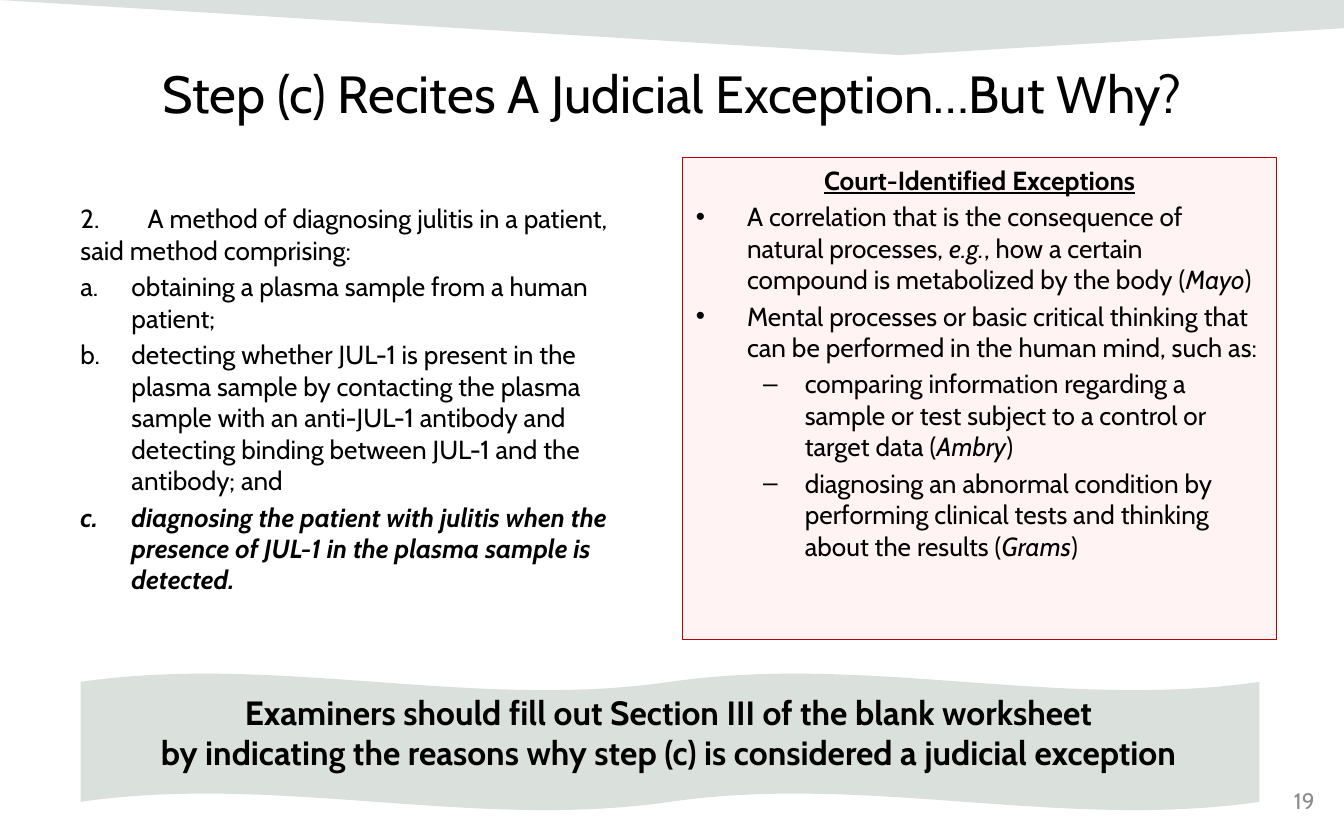
import pptx
import pptx.dml.color
import pptx.enum.shapes
import pptx.enum.text
import pptx.oxml.ns
import pptx.util
from lxml import etree

Inches = pptx.util.Inches
Pt = pptx.util.Pt
ALIGN = pptx.enum.text.PP_ALIGN
ANCHOR = pptx.enum.text.MSO_ANCHOR
SHAPE = pptx.enum.shapes.MSO_SHAPE

FONT = "Cabin"
BULLET_FONT = "Arial"
BODY_SIZE = 14
SPACE_SHARE = 0.2

TITLE = "Step (c) Recites A Judicial Exception…But Why?"
BANNER = ("Examiners should fill out Section III of the blank worksheet\v"
          "by indicating the reasons why step (c) is considered a judicial exception")
PAGE_NUMBER = "19"

# Corners of the band along the top edge, in hundredths of an inch
TOP_BAND = [(0, 0), (1000, 0), (1000, 21), (669, 41)]

# Each paragraph: style name, then runs of (text, marks); marks: b bold, i italic, u underline
CLAIM = [
    ("intro", [("2.\tA method of diagnosing julitis in a patient, said method comprising:", "")]),
    ("letter", [("obtaining a plasma sample from a human patient;", "")]),
    ("letter", [("detecting whether JUL-1 is present in the plasma sample by contacting the plasma "
                 "sample with an anti-JUL-1 antibody and detecting binding between JUL-1 and the "
                 "antibody; and", "")]),
    ("letter", [("diagnosing the patient with julitis when the presence of JUL-1 in the plasma "
                 "sample is detected.", "bi")]),
]
EXCEPTIONS = [
    ("heading", [("Court-Identified Exceptions", "bu")]),
    ("bullet", [("A correlation that is the consequence of natural processes, ", ""), ("e.g.", "i"),
                (", how a certain compound is metabolized by the body (", ""), ("Mayo", "i"),
                (")", "")]),
    ("bullet", [("Mental processes or basic critical thinking that can be performed in the human "
                 "mind, such as:", "")]),
    ("dash", [("comparing information regarding a sample or test subject to a control or target "
               "data (", ""), ("Ambry", "i"), (")", "")]),
    ("dash", [("diagnosing an abnormal condition by performing clinical tests and thinking about "
               "the results (", ""), ("Grams", "i"), (")", "")]),
]

# Style: level, left margin, hanging indent, XML tag and attributes of the bullet or tab stop
STYLES = {
    "plain": (0, 0, 0, None, {}),
    "heading": (0, 0, 0, None, {}),
    "intro": (0, 0, 0, "tabLst", {"pos": str(Inches(0.5)), "algn": "l"}),
    "letter": (0, 0.38, 0.38, "buAutoNum", {"type": "alphaLcPeriod"}),
    "bullet": (0, 0.38, 0.38, "buChar", {"char": "•"}),
    "dash": (1, 0.81, 0.31, "buChar", {"char": "–"}),
}


def color(hex_string):
    return pptx.dml.color.RGBColor.from_string(hex_string)


def add_child(parent, tag, attributes=None):
    return etree.SubElement(parent, pptx.oxml.ns.qn("a:" + tag), attributes or {})


def fill_shape(shape, fill, line=None):
    shape.shadow.inherit = False
    shape.fill.solid()
    shape.fill.fore_color.rgb = color(fill)
    if line:
        shape.line.color.rgb = color(line)
        shape.line.width = Pt(0.75)
    else:
        shape.line.fill.background()


def apply_style(paragraph, style):
    level, margin, hanging, tag, attributes = STYLES[style]
    paragraph.level = level
    properties = paragraph._p.get_or_add_pPr()
    properties.set("marL", str(Inches(margin)))
    properties.set("indent", str(-Inches(hanging)))
    if tag == "tabLst":
        add_child(add_child(properties, tag), "tab", attributes)
    elif tag:
        if tag == "buChar":
            add_child(properties, "buFont", {"typeface": BULLET_FONT})
        add_child(properties, tag, attributes)


def write(shape, paragraphs, size=BODY_SIZE, align=ALIGN.LEFT, anchor=ANCHOR.TOP, fore="000000"):
    """Fill a shape with a plain string or a list of (style, runs)."""
    if isinstance(paragraphs, str):
        paragraphs = [("plain", [(paragraphs, "")])]
    frame = shape.text_frame
    frame.word_wrap = True
    frame.vertical_anchor = anchor
    for index, (style, runs) in enumerate(paragraphs):
        paragraph = frame.add_paragraph() if index else frame.paragraphs[0]
        paragraph.alignment = ALIGN.CENTER if style == "heading" else align
        paragraph.space_before = Pt(size * SPACE_SHARE if index else 0)
        apply_style(paragraph, style)
        for text, marks in runs:
            for part_index, part in enumerate(text.split("\v")):
                if part_index:
                    paragraph.add_line_break()
                run = paragraph.add_run()
                run.text = part
                run.font.name = FONT
                run.font.size = Pt(size)
                run.font.color.rgb = color(fore)
                run.font.bold = "b" in marks
                run.font.italic = "i" in marks
                run.font.underline = "u" in marks


def box(*lengths):
    return [Inches(length) for length in lengths]


presentation = pptx.Presentation()
presentation.slide_width, presentation.slide_height = box(10, 6.25)
slide = presentation.slides.add_slide(presentation.slide_layouts[6])
shapes = slide.shapes

builder = shapes.build_freeform(*TOP_BAND[0], scale=Inches(0.01))
builder.add_line_segments(TOP_BAND[1:], close=True)
top_band = builder.convert_to_shape()
fill_shape(top_band, "09331C")
band_color = top_band._element.spPr.find(".//" + pptx.oxml.ns.qn("a:srgbClr"))
add_child(band_color, "alpha", {"val": "15000"})

wave = shapes.add_shape(SHAPE.DOUBLE_WAVE, *box(0.6, 5.01, 8.77, 1.02))
fill_shape(wave, "DAE1DD")

write(shapes.add_textbox(*box(0.5, 0.41, 9, 0.97)), TITLE, size=28, align=ALIGN.CENTER)
write(shapes.add_textbox(*box(0.5, 1.46, 4.42, 3.74)), CLAIM)

exceptions_box = shapes.add_shape(SHAPE.RECTANGLE, *box(5.08, 1.17, 4.42, 3.59))
fill_shape(exceptions_box, "FFF3F3", line="C00000")
write(exceptions_box, EXCEPTIONS)

write(shapes.add_textbox(*box(0.59, 5.1, 8.77, 0.71)), [("plain", [(BANNER, "b")])],
      size=18, align=ALIGN.CENTER)
write(shapes.add_textbox(*box(7.55, 5.79, 2.33, 0.33)), PAGE_NUMBER, size=12,
      align=ALIGN.RIGHT, anchor=ANCHOR.MIDDLE, fore="8C8C8C")

presentation.save("out.pptx")
